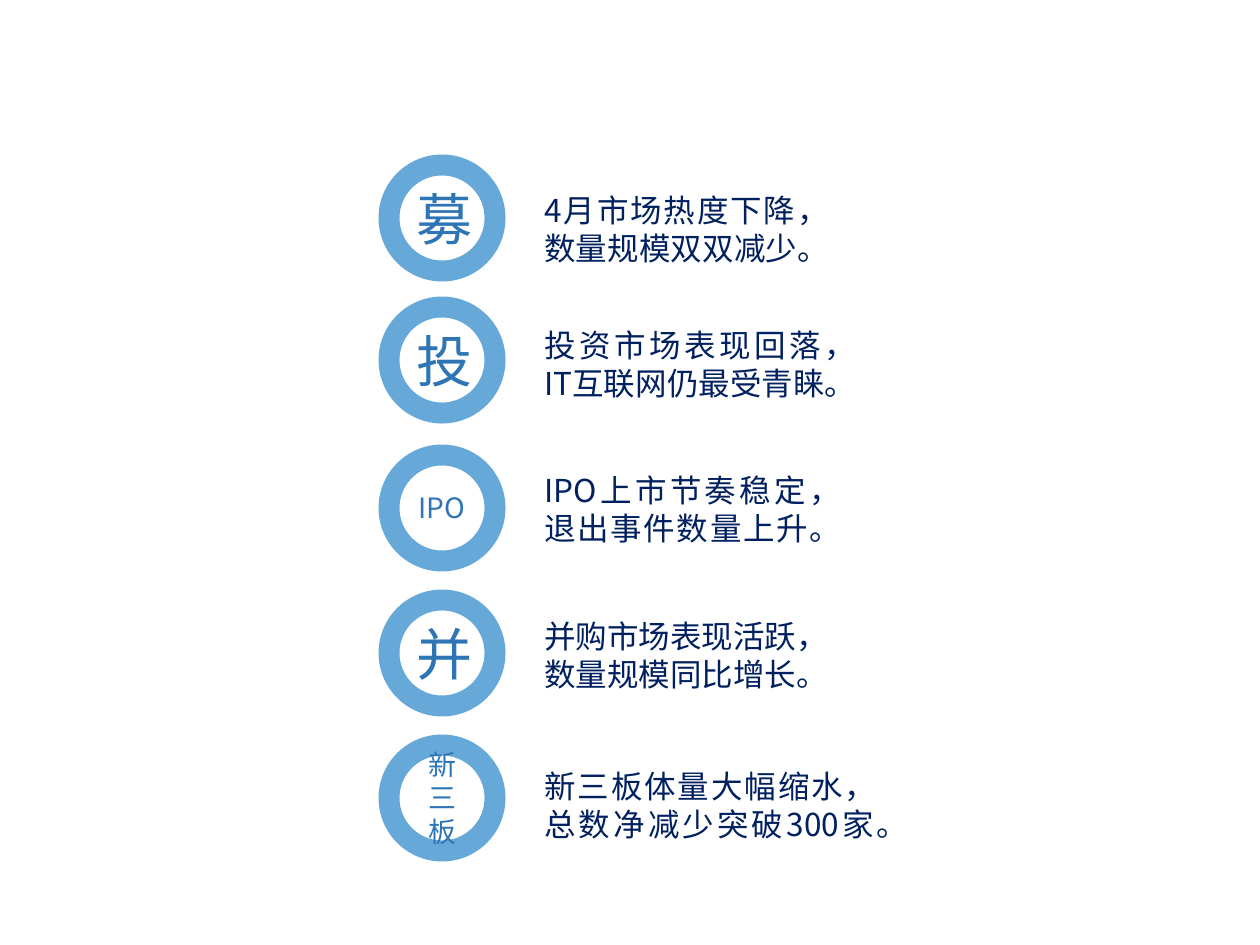
import pptx
import pptx.util
import pptx.dml.color
import pptx.enum.shapes
import pptx.enum.text
from lxml import etree
from pptx.oxml.ns import qn

PX = 914400 // 126
RING = 106
TEXT_H = 89
ALIGN = pptx.enum.text.PP_ALIGN


def px(n):
    return pptx.util.Emu(n * PX)


def rgb(value):
    return pptx.dml.color.RGBColor.from_string(value)


def style(p, font, size, color, align):
    """Set the look of a paragraph, including its East Asian font."""
    p.alignment = align
    p.font.name = font
    p.font.size = pptx.util.Pt(size)
    p.font.color.rgb = rgb(color)
    for r in p.runs:
        r.font.name = font
        ea = etree.SubElement(r._r.get_or_add_rPr(), qn("a:ea"))
        ea.set("typeface", font)


def add_ring(s, x, y, label, size):
    sp = s.shapes.add_shape(pptx.enum.shapes.MSO_SHAPE.OVAL,
                            px(x), px(y), px(RING), px(RING))
    sp.shadow.inherit = False
    sp.fill.background()
    sp.line.color.rgb = rgb("0070C0")
    sp.line.width = pptx.util.Pt(12)
    # 60 % opaque outline
    color = sp.line._ln.find(".//" + qn("a:srgbClr"))
    etree.SubElement(color, qn("a:alpha")).set("val", "60000")
    tf = sp.text_frame
    tf.word_wrap = True
    tf.vertical_anchor = pptx.enum.text.MSO_ANCHOR.MIDDLE
    p = tf.paragraphs[0]
    p.text = label
    style(p, "Noto Sans CJK JP", size, "2E75B6", ALIGN.CENTER)
    if size < 20:
        p.line_spacing = pptx.util.Pt(19)


def add_summary(s, x, y, w, lines):
    sp = s.shapes.add_textbox(px(x), px(y), px(w), px(TEXT_H))
    tf = sp.text_frame
    tf.word_wrap = True
    tf.margin_top = px(10)
    for i, line in enumerate(lines):
        p = tf.add_paragraph() if i else tf.paragraphs[0]
        p.text = line
        style(p, "Noto Sans CJK SC", 18, "002060", ALIGN.JUSTIFY)
        p.line_spacing = pptx.util.Pt(21.7)


def add_row(s, x, y, label, size, text_dy, text_w, lines):
    """One topic: a ring with its label, and the summary to its right."""
    add_ring(s, x, y, label, size)
    add_summary(s, x + 143, y + text_dy, text_w, lines)


# top, label, label size, text offset, text width, paragraphs
ROWS = [
    (165, "募", 32, 16, 278, ["4月市场热度下降，数量规模双双减少。"]),
    (307, "投", 32, 9, 305, ["投资市场表现回落，IT互联网仍最受青睐。"]),
    (455, "IPO", 16, 6, 290, ["IPO上市节奏稳定，退出事件数量上升。"]),
    (600, "并", 32, 7, 330, ["并购市场表现活跃，", "数量规模同比增长。"]),
    (745, "新三板", 16, 12, 357, ["新三板体量大幅缩水，总数净减少突破300家。"]),
]


def main():
    prs = pptx.Presentation()
    prs.slide_width = pptx.util.Inches(10)
    prs.slide_height = pptx.util.Inches(7.5)
    s = prs.slides.add_slide(prs.slide_layouts[6])
    for row in ROWS:
        add_row(s, 389, *row)
    prs.save("out.pptx")


if __name__ == "__main__":
    main()
